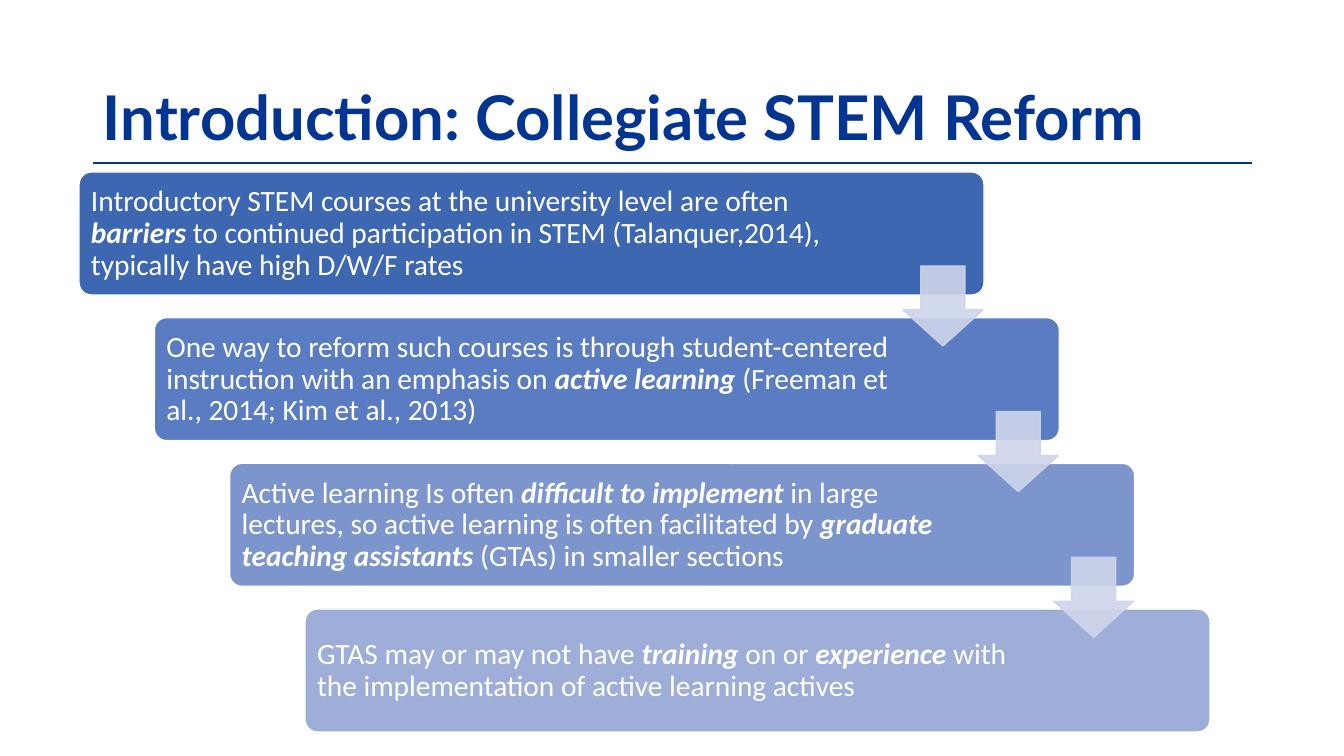
from lxml import etree
from pptx import Presentation
from pptx import util as u
from pptx.dml.color import RGBColor
from pptx.enum import shapes, text
from pptx.oxml.ns import qn

PX = 914400 / 100.8
NAVY = RGBColor(0x01, 0x35, 0x91)
WHITE = RGBColor(0xFF, 0xFF, 0xFF)
ARROW = RGBColor(0xCF, 0xD5, 0xEA)
STEP_FILLS = [RGBColor(0x3E, 0x67, 0xB2), RGBColor(0x5A, 0x7C, 0xC3),
              RGBColor(0x7D, 0x95, 0xCD), RGBColor(0x9F, 0xAE, 0xD8)]

# Each step is a list of runs; every second run is emphasised
STEPS = [
    ["Introductory STEM courses at the university level are often ", "barriers",
     " to continued participation in STEM (Talanquer,2014), typically have high D/W/F rates"],
    ["One way to reform such courses is through student-centered instruction "
     "with an emphasis on ", "active learning ",
     "(Freeman et al., 2014; Kim et al., 2013)"],
    ["Active learning Is often ", "difficult to implement ",
     "in large lectures, so active learning is often facilitated by ",
     "graduate teaching assistants ", "(GTAs) in smaller sections"],
    ["GTAS may or may not have ", "training", " on or ", "experience",
     " with the implementation of active learning actives"],
]
TEXT_WIDTHS = [762, 742, 742, 742]
STEP_W, STEP_H = 905, 123
ARROW_SIZE, ARROW_DROP = 80, 94


def px(*lengths):
    return [u.Emu(round(length * PX)) for length in lengths]


def add_text(slide, box, anchor, margin):
    frame = slide.shapes.add_textbox(*px(*box)).text_frame
    frame.word_wrap = True
    frame.vertical_anchor = anchor
    frame.margin_left, frame.margin_top, frame.margin_right, frame.margin_bottom = px(*margin)
    paragraph = frame.paragraphs[0]
    paragraph.line_spacing = 0.9
    return paragraph


def add_run(paragraph, words, font, size, color, bold, italic=False):
    run = paragraph.add_run()
    run.text = words
    run.font.name, run.font.size = font, u.Pt(size)
    run.font.bold, run.font.italic = bold, italic
    run.font.color.rgb = color


def add_filled(slide, preset, box, fill, line, adjustments):
    shape = slide.shapes.add_shape(preset, *px(*box))
    shape.shadow.inherit = False
    for index, value in enumerate(adjustments):
        shape.adjustments[index] = value
    shape.fill.solid()
    shape.fill.fore_color.rgb = fill
    shape.line.color.rgb = line
    shape.line.width = u.Pt(1)
    return shape


def draw_heading(slide, x, y, w, h):
    rule_y = y + h + 4
    rule = slide.shapes.add_connector(shapes.MSO_CONNECTOR.STRAIGHT,
                                      *px(x, rule_y, x + w, rule_y))
    rule.line.color.rgb = NAVY
    rule.line.width = u.Pt(1)
    etree.SubElement(rule._element.spPr, qn("a:effectLst"))
    title = add_text(slide, (x, y, w, h), text.MSO_ANCHOR.BOTTOM, (10, 5, 10, 5))
    add_run(title, "Introduction: Collegiate STEM Reform", "Lato", 44, NAVY, True)


def draw_staircase(slide, x, y, w, h):
    gaps = len(STEPS) - 1
    shift, drop = (w - STEP_W) / gaps, (h - STEP_H) / gaps
    corners = [(x + i * shift, y + i * drop) for i in range(len(STEPS))]

    # Step boxes with their text
    for (left, top), runs, fill, text_w in zip(corners, STEPS, STEP_FILLS, TEXT_WIDTHS):
        add_filled(slide, shapes.MSO_SHAPE.ROUNDED_RECTANGLE,
                   (left, top, STEP_W, STEP_H), fill, WHITE, [0.1])
        paragraph = add_text(slide, (left + 3, top + 4, text_w, STEP_H - 7),
                             text.MSO_ANCHOR.MIDDLE, (9, 9, 9, 9))
        for index, words in enumerate(runs):
            emphasised = index % 2 == 1
            add_run(paragraph, words, "Calibri", 21, WHITE, emphasised, emphasised)

    # Translucent arrows from each step to the next
    for left, top in corners[:-1]:
        arrow = add_filled(slide, shapes.MSO_SHAPE.DOWN_ARROW,
                           (left + STEP_W - ARROW_SIZE - 1, top + ARROW_DROP,
                            ARROW_SIZE, ARROW_SIZE), ARROW, ARROW, [0.55, 0.45])
        for color in arrow._element.spPr.iter(qn("a:srgbClr")):
            etree.SubElement(color, qn("a:alpha"), val="90000")


def main():
    deck = Presentation()
    deck.slide_width, deck.slide_height = px(1344, 756)
    slide = deck.slides.add_slide(deck.slide_layouts[6])
    draw_heading(slide, 93, 62, 1159, 97)
    draw_staircase(slide, 79, 172, 1131, 560)
    deck.save("out.pptx")


if __name__ == "__main__":
    main()
